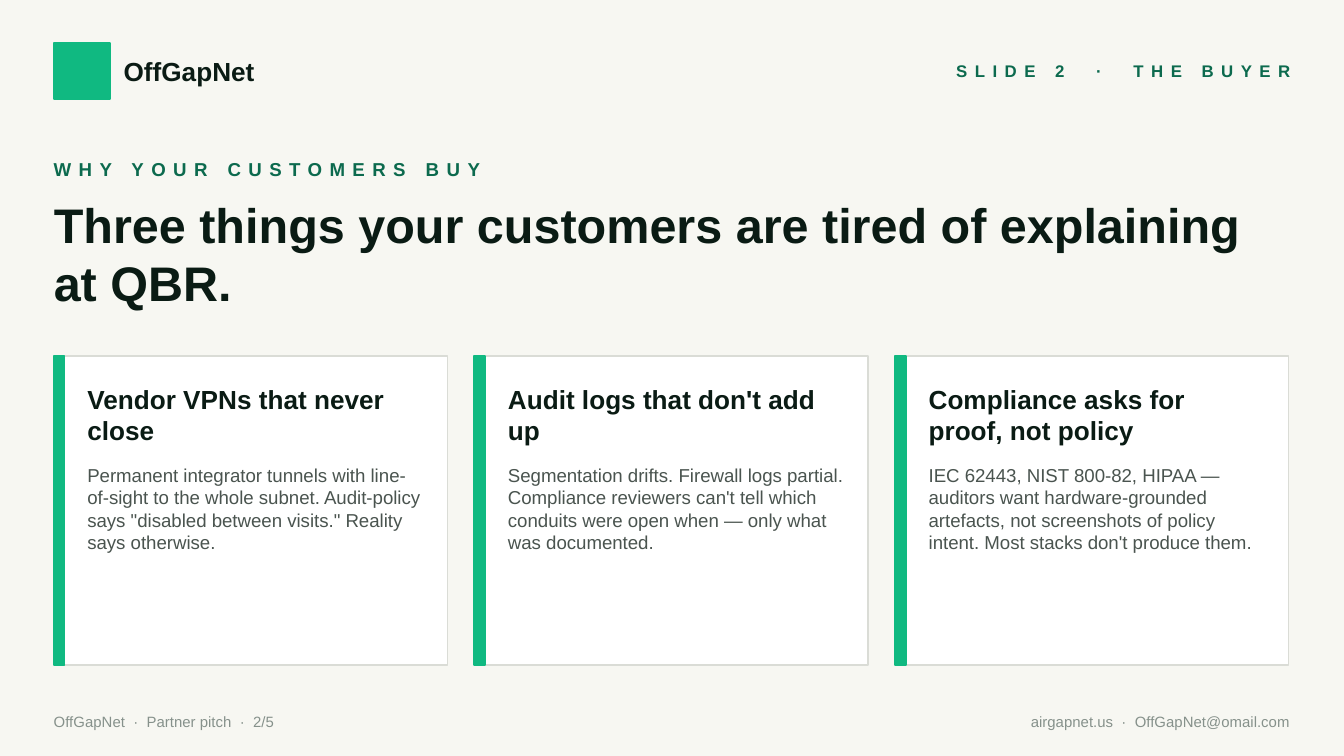
import dataclasses

import pptx
import pptx.dml.color
import pptx.enum.shapes
import pptx.enum.text
import pptx.util

ALIGN = pptx.enum.text.PP_ALIGN
ANCHOR = pptx.enum.text.MSO_ANCHOR
SCALE = 4572
WIDE, HIGH = 2000, 1125
EDGE, GAP = 80, 40
BRAND = "OffGapNet"

CARDS = [
    ("Vendor VPNs that never close",
     "Permanent integrator tunnels with line-of-sight to the whole subnet. "
     "Audit-policy says \"disabled between visits.\" Reality says otherwise."),
    ("Audit logs that don't add up",
     "Segmentation drifts. Firewall logs partial. Compliance reviewers can't "
     "tell which conduits were open when — only what was documented."),
    ("Compliance asks for proof, not policy",
     "IEC 62443, NIST 800-82, HIPAA — auditors want hardware-grounded artefacts, "
     "not screenshots of policy intent. Most stacks don't produce them."),
]


@dataclasses.dataclass(frozen=True)
class Theme:
    """Colours, font and type sizes of the deck."""
    font: str = "Arial"
    paper: str = "F7F7F2"
    white: str = "FFFFFF"
    rule: str = "DADCD6"
    green: str = "10B981"
    deep: str = "0C6A4E"
    ink: str = "0A1B14"
    body: str = "4A544F"
    mute: str = "86918B"
    title: int = 26
    head: int = 14
    text: int = 10
    tag: int = 9
    foot: int = 8


THEME = Theme()


def emu(*sizes):
    """Turn px lengths into EMU."""
    return [pptx.util.Emu(size * SCALE) for size in sizes]


def tint(name):
    """Return the colour for a hex name."""
    return pptx.dml.color.RGBColor.from_string(name)


def write(shape, words, size, color, bold=False, align=ALIGN.LEFT,
          anchor=ANCHOR.MIDDLE, track=0):
    """Fill a shape with one styled paragraph and no insets."""
    frame = shape.text_frame
    frame.text = words
    frame.word_wrap = True
    frame.auto_size = pptx.enum.text.MSO_AUTO_SIZE.NONE
    frame.vertical_anchor = anchor
    frame.margin_left = frame.margin_right = 0
    frame.margin_top = frame.margin_bottom = 0
    line = frame.paragraphs[0]
    line.alignment = align
    for run in line.runs:
        run.font.name = THEME.font
        run.font.size = pptx.util.Pt(size)
        run.font.bold = bold
        run.font.color.rgb = tint(color)
        if track:
            run.font._element.set("spc", str(track * 100))


def label(slide, box, words, size, color, **style):
    """Add a text box."""
    write(slide.shapes.add_textbox(*emu(*box)), words, size, color, **style)


def block(slide, box, fill, edge, width):
    """Add a flat rectangle."""
    kind = pptx.enum.shapes.MSO_SHAPE.RECTANGLE
    shape = slide.shapes.add_shape(kind, *emu(*box))
    shape.shadow.inherit = False
    shape.fill.solid()
    shape.fill.fore_color.rgb = tint(fill)
    shape.line.color.rgb = tint(edge)
    shape.line.width = pptx.util.Pt(width)


def header(slide, box):
    """Place a plain square, the brand name and the slide tag."""
    left, top, width, height = box
    block(slide, (left, top, height, height), THEME.green, THEME.green, 1)
    label(slide, (left + height + 20, top, 500, height), BRAND,
          THEME.head, THEME.ink, bold=True)
    label(slide, (left + width - 720, top, 720, height), "SLIDE 2  ·  THE BUYER",
          THEME.tag, THEME.deep, bold=True, align=ALIGN.RIGHT, track=4)


def heading(slide, box):
    """Place the kicker and the title below it."""
    left, top, width, height = box
    label(slide, (left, top, width, 64), "WHY YOUR CUSTOMERS BUY",
          THEME.text, THEME.deep, bold=True, track=4)
    title = slide.shapes.title
    title.left, title.top, title.width, title.height = emu(
        left, top + 70, width, height - 70)
    write(title, "Three things your customers are tired of explaining at QBR.",
          THEME.title, THEME.ink, bold=True, anchor=ANCHOR.TOP)


def card(slide, box, head, body):
    """Place one card with its accent bar, head and body."""
    left, top, width, height = box
    block(slide, box, THEME.white, THEME.rule, 0.75)
    block(slide, (left, top, 16, height), THEME.green, THEME.green, 1)
    label(slide, (left + 50, top + 40, 500, 110), head,
          THEME.head, THEME.ink, bold=True, anchor=ANCHOR.TOP)
    label(slide, (left + 50, top + 160, 500, height - 180), body,
          THEME.text, THEME.body, anchor=ANCHOR.TOP)


def row(slide, box):
    """Spread the cards evenly over the box."""
    left, top, width, height = box
    count = len(CARDS)
    span = (width - GAP * (count - 1)) // count
    for index, (head, body) in enumerate(CARDS):
        spot = left + index * (span + GAP)
        card(slide, (spot, top, span, height), head, body)


def footer(slide, box):
    """Place the page note and the contact line."""
    left, top, width, height = box
    label(slide, (left, top, 1200, height), f"{BRAND}  ·  Partner pitch  ·  2/5",
          THEME.foot, THEME.mute)
    label(slide, (left + width - 800, top, 800, height),
          f"airgapnet.us  ·  {BRAND}@omail.com",
          THEME.foot, THEME.mute, align=ALIGN.RIGHT)


def main():
    """Build the deck and save it."""
    deck = pptx.Presentation()
    deck.slide_width, deck.slide_height = emu(WIDE, HIGH)
    slide = deck.slides.add_slide(deck.slide_layouts.get_by_name("Title Only"))
    slide.background.fill.solid()
    slide.background.fill.fore_color.rgb = tint(THEME.paper)
    span = WIDE - 2 * EDGE
    header(slide, (EDGE, 64, span, 84))
    heading(slide, (EDGE, 220, span - GAP, 210))
    row(slide, (EDGE, 530, span, 460))
    footer(slide, (EDGE, 1042, span, 64))
    deck.save("out.pptx")


if __name__ == "__main__":
    main()
